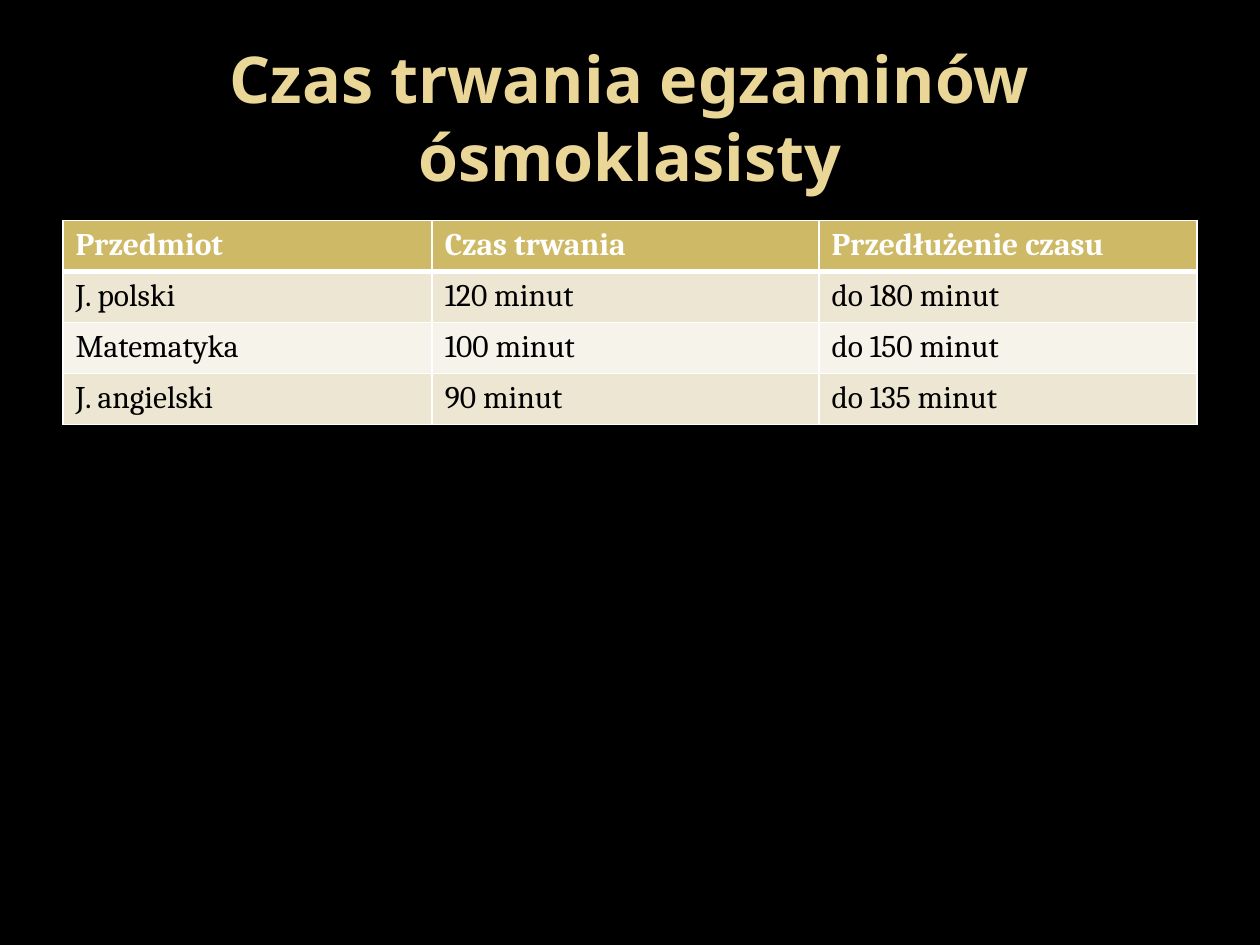
from lxml import etree
from pptx import Presentation
from pptx.dml.color import RGBColor
from pptx.enum.text import MSO_ANCHOR, PP_ALIGN
from pptx.oxml.ns import qn
from pptx.util import Inches, Pt

CENTER = PP_ALIGN.CENTER
MIDDLE = MSO_ANCHOR.MIDDLE

COLORS = {
    "background": "000000",
    "title": "EAD696",
    "header": "CEB966",
    "odd_row": "EDE6D3",
    "even_row": "F6F3EA",
    "header_text": "FFFFFF",
    "body_text": "000000",
    "border": "FFFFFF",
}
TITLE_FONT = "Noto Sans"
TABLE_FONT = "Cambria"

EXAM_TIMES = [
    ("Przedmiot", "Czas trwania", "Przedłużenie czasu"),
    ("J. polski", "120 minut", "do 180 minut"),
    ("Matematyka", "100 minut", "do 150 minut"),
    ("J. angielski", "90 minut", "do 135 minut"),
]
COLUMN_WIDTHS = (2.93, 3.07, 3)


def color(name):
    return RGBColor.from_string(COLORS[name])


def add_run(paragraph, text, font, size, color_name, bold):
    run = paragraph.add_run()
    run.text = text
    run.font.name = font
    run.font.size = Pt(size)
    run.font.bold = bold
    run.font.color.rgb = color(color_name)


def set_borders(cell, widths):
    """Draw the cell's sides; widths are in points, keyed L, R, T, B."""
    properties = cell._tc.get_or_add_tcPr()
    for side, width in widths.items():
        line = etree.SubElement(properties, qn(f"a:ln{side}"), w=str(Pt(width)))
        fill = etree.SubElement(line, qn("a:solidFill"))
        etree.SubElement(fill, qn("a:srgbClr"), val=COLORS["border"])


def add_title(slide, left, top, width, height):
    title = slide.shapes.add_textbox(left, top, width, height)
    frame = title.text_frame
    frame.word_wrap = True
    frame.vertical_anchor = MIDDLE
    paragraph = frame.paragraphs[0]
    paragraph.alignment = CENTER
    add_run(paragraph, "Czas trwania egzaminów ósmoklasisty",
            TITLE_FONT, 36.9, "title", True)


def add_exam_table(slide, left, top, width, height):
    exams = slide.shapes.add_table(
        len(EXAM_TIMES), len(COLUMN_WIDTHS), left, top, width, height).table
    for column, share in zip(exams.columns, COLUMN_WIDTHS):
        column.width = int(width * share / sum(COLUMN_WIDTHS))

    for row, texts in enumerate(EXAM_TIMES):
        is_header = row == 0
        band = "header" if is_header else "odd_row" if row % 2 else "even_row"
        text_color = "header_text" if is_header else "body_text"
        # The header is set off from the body by a thick line
        sides = {"L": 1, "R": 1,
                 "T": 3 if row == 1 else 1,
                 "B": 3 if is_header else 1}
        for column, text in enumerate(texts):
            cell = exams.cell(row, column)
            set_borders(cell, sides)
            cell.fill.solid()
            cell.fill.fore_color.rgb = color(band)
            add_run(cell.text_frame.paragraphs[0], text,
                    TABLE_FONT, 18, text_color, is_header)


def main():
    prs = Presentation()
    prs.slide_width, prs.slide_height = Inches(10), Inches(7.5)
    slide = prs.slides.add_slide(prs.slide_layouts[6])
    slide.background.fill.solid()
    slide.background.fill.fore_color.rgb = color("background")

    add_title(slide, Inches(0.5), Inches(0.3), Inches(9), Inches(1.25))
    add_exam_table(slide, Inches(0.5), Inches(1.75), Inches(9), Inches(1.62))
    prs.save("out.pptx")


if __name__ == "__main__":
    main()
